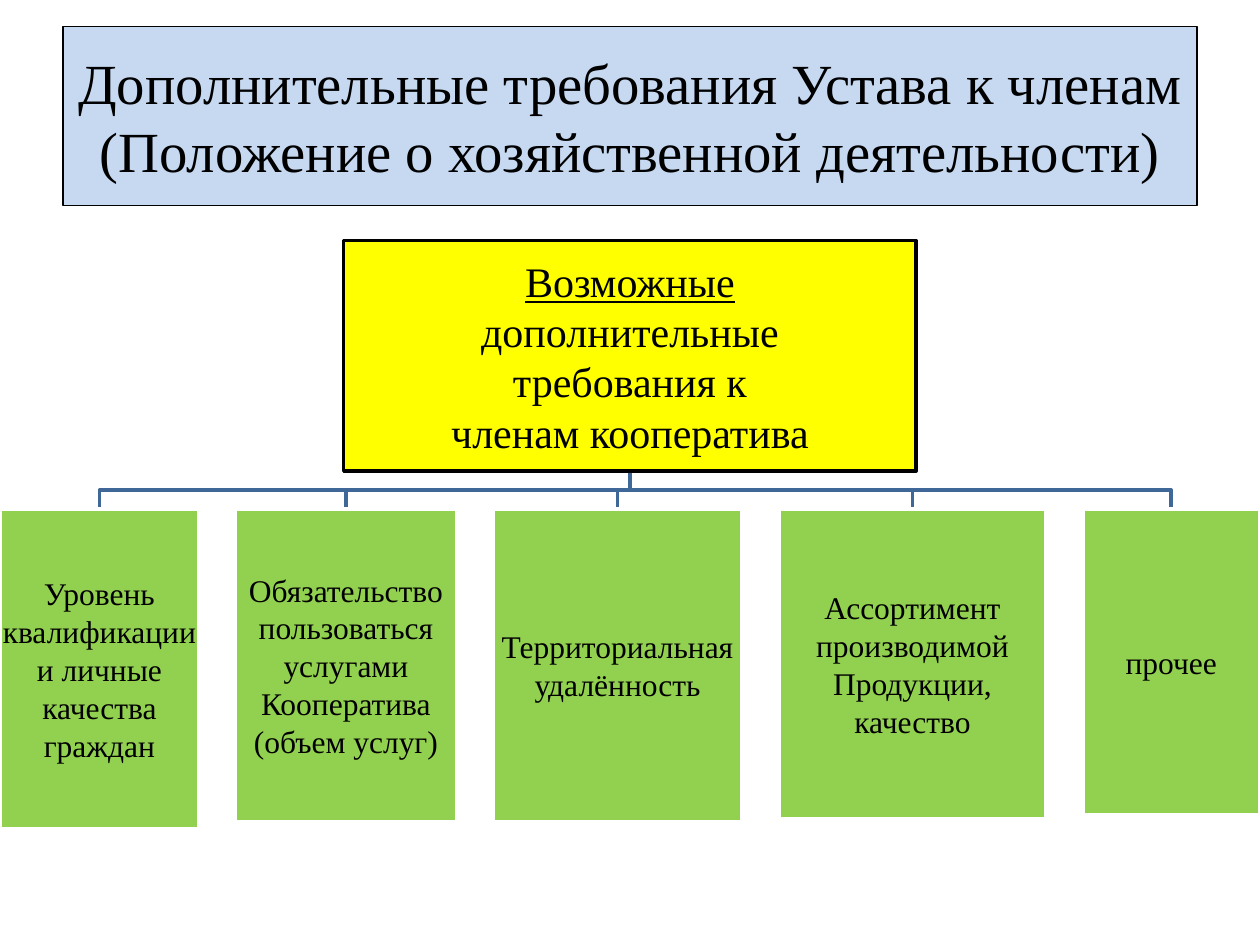
from dataclasses import dataclass

from pptx import Presentation
from pptx.dml.color import RGBColor
from pptx.enum.shapes import MSO_SHAPE
from pptx.enum.text import MSO_ANCHOR, MSO_AUTO_SIZE, PP_ALIGN
from pptx.util import Cm, Pt

RECTANGLE = MSO_SHAPE.RECTANGLE
MIDDLE = MSO_ANCHOR.MIDDLE
CENTER = PP_ALIGN.CENTER
NO_AUTOFIT = MSO_AUTO_SIZE.NONE

FONT = "Times New Roman"
BLACK, WHITE = "000000", "FFFFFF"
PALE_BLUE, YELLOW, GREEN, LINK_BLUE = "C6D9F1", "FFFF00", "92D050", "3F6797"
TITLE_TEXT = "Дополнительные требования Устава к членам (Положение о хозяйственной деятельности)"


@dataclass
class Node:
    lines: list[str]
    left: float
    top: float
    width: float
    height: float
    fill: str
    outline: str
    size: float
    inset: float

    @property
    def center(self) -> float:
        return self.left + self.width / 2


@dataclass
class Requirement:
    lines: list[str]
    width: float
    height: float


ROOT = Node(
    ["Возможные", "дополнительные", "требования к", "членам кооператива"],
    6.93, 4.85, 11.54, 4.65, YELLOW, BLACK, 24, 0.05,
)
REQUIREMENTS = [
    Requirement(["Уровень", "квалификации", "и личные", "качества граждан"], 4.01, 6.45),
    Requirement(["Обязательство", "пользоваться", "услугами", "Кооператива (объем услуг)"],
                4.45, 6.3),
    Requirement(["Территориальная", "удалённость"], 5.02, 6.3),
    Requirement(["Ассортимент", "производимой", "Продукции, качество"], 5.39, 6.25),
    Requirement(["прочее"], 3.56, 6.17),
]
ROW_TOP = 10.26
ROW_GAP = 0.74


def color(value: str) -> RGBColor:
    return RGBColor.from_string(value)


def paint(shape, fill: str, outline: str, line_width: float) -> None:
    shape.fill.solid()
    shape.fill.fore_color.rgb = color(fill)
    shape.line.color.rgb = color(outline)
    shape.line.width = Pt(line_width)


def write(shape, lines: list[str], size: float) -> None:
    """Fill the shape with centred paragraphs, one per line."""
    frame = shape.text_frame
    frame.text = "\n".join(lines)
    frame.word_wrap = True
    frame.auto_size = NO_AUTOFIT
    frame.vertical_anchor = MIDDLE
    for para in frame.paragraphs:
        para.alignment = CENTER
        para.font.name = FONT
        para.font.size = Pt(size)
        para.font.color.rgb = color(BLACK)


def draw_title(page) -> None:
    title = page.shapes.title
    title.left, title.top, title.width, title.height = Cm(1.27), Cm(0.53), Cm(22.86), Cm(3.61)
    paint(title, PALE_BLUE, BLACK, 0.75)
    write(title, [TITLE_TEXT], 32.4)


def draw_node(page, node: Node):
    box = page.shapes.add_shape(
        RECTANGLE, Cm(node.left), Cm(node.top), Cm(node.width), Cm(node.height)
    )
    box.shadow.inherit = False
    paint(box, node.fill, node.outline, 2)
    write(box, node.lines, node.size)
    frame = box.text_frame
    frame.margin_left = frame.margin_right = Cm(node.inset)
    frame.margin_top = frame.margin_bottom = Cm(node.inset)
    return box


def draw_link(page, parent: Node, child: Node) -> None:
    """Draw an open path: down from the parent, across, down to the child."""
    start = parent.top + parent.height
    middle = Cm((start + child.top) / 2)
    builder = page.shapes.build_freeform(Cm(parent.center), Cm(start))
    builder.add_line_segments(
        [(Cm(parent.center), middle), (Cm(child.center), middle),
         (Cm(child.center), Cm(child.top))],
        close=False,
    )
    link = builder.convert_to_shape()
    link.shadow.inherit = False
    link.fill.background()
    link.line.color.rgb = color(LINK_BLUE)
    link.line.width = Pt(2)


def place_row(requirements: list[Requirement]) -> list[Node]:
    """Lay the boxes out from left to right with equal gaps."""
    nodes = []
    left = 0.0
    for item in requirements:
        nodes.append(Node(item.lines, left, ROW_TOP, item.width, item.height,
                          GREEN, WHITE, 18, 0.03))
        left += item.width + ROW_GAP
    return nodes


def main() -> None:
    deck = Presentation()
    deck.slide_width, deck.slide_height = Cm(25.4), Cm(19.05)
    page = deck.slides.add_slide(deck.slide_layouts.get_by_name("Title Only"))
    draw_title(page)

    children = place_row(REQUIREMENTS)
    for child in reversed(children):
        draw_link(page, ROOT, child)
    root_box = draw_node(page, ROOT)
    root_box.text_frame.paragraphs[0].font.underline = True
    for child in children:
        draw_node(page, child)

    deck.save("out.pptx")


if __name__ == "__main__":
    main()
